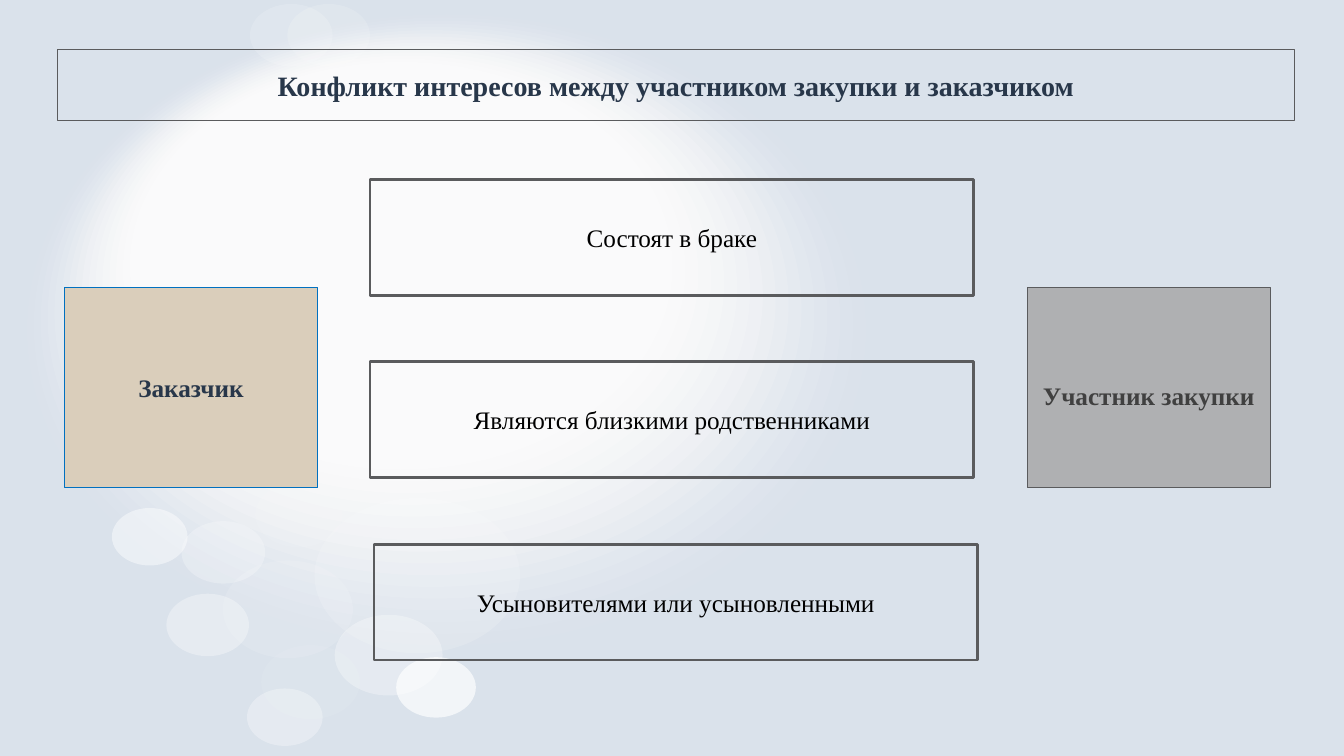
from dataclasses import dataclass

import pptx
import pptx.dml.color
import pptx.enum.shapes
import pptx.enum.text
import pptx.oxml.ns
import pptx.util
from lxml import etree

WIDTH = pptx.util.Inches(13.33)
HEIGHT = pptx.util.Inches(7.5)
FONT = "Times New Roman"
COLOURS = {
    "background": "DAE2EB",
    "white": "FFFFFF",
    "black": "000000",
    "heading": "28374A",
    "border": "5A5B5D",
    "blue": "0070C0",
    "sand": "DACEBB",
    "grey": "AFB0B2",
    "charcoal": "404040",
}
RECTANGLE = pptx.enum.shapes.MSO_SHAPE.RECTANGLE
OVAL = pptx.enum.shapes.MSO_SHAPE.OVAL


@dataclass(frozen=True)
class Area:
    """Percentages of the slide's width and height."""
    left: float
    top: float
    width: float
    height: float


@dataclass(frozen=True)
class Bubble:
    area: Area
    opacity: float


@dataclass(frozen=True)
class Box:
    area: Area
    text: str
    colour: str = "black"
    size: int = 18
    bold: bool = False
    fill: str = ""
    border: str = "border"
    border_width: float = 0.75
    line_spacing: float = 1.0
    space_before: int = 0
    space_after: int = 0


GLOW_STEPS = 16
GLOW = [
    Bubble(
        Area(1.5 + 0.51 * step, 1.47 + 0.42 * step, 63.9 - 1.47 * step, 85.47 - 1.97 * step),
        1.4 + 1.6 * step,
    )
    for step in range(1, GLOW_STEPS + 1)
]
BUBBLES = [
    Bubble(Area(16.58, 74.13, 9.68, 12.93), 12),
    Bubble(Area(23.4, 65.87, 15.3, 20.53), 15),
    Bubble(Area(8.33, 67.2, 5.63, 7.6), 45),
    Bubble(Area(18.98, 63.73, 6.53, 8.67), 8),
    Bubble(Area(13.5, 68.93, 6.23, 8.27), 25),
    Bubble(Area(12.38, 78.53, 6.15, 8.27), 33),
    Bubble(Area(19.43, 85.33, 7.35, 9.8), 7),
    Bubble(Area(18.38, 91.07, 5.63, 7.6), 31),
    Bubble(Area(29.48, 86.93, 5.93, 8), 67),
    Bubble(Area(24.9, 81.33, 8.03, 10.67), 31),
    Bubble(Area(21.38, 0.53, 6.15, 8.27), 15),
    Bubble(Area(18.6, 0.53, 6.15, 8.27), 16),
]
PARTIES = [
    Box(Area(4.28, 6.53, 92.03, 9.47),
        "Конфликт интересов между участником закупки и заказчиком",
        colour="heading", size=20, bold=True),
    Box(Area(4.8, 38, 18.83, 26.53), "Заказчик",
        colour="heading", bold=True, fill="sand", border="blue"),
    Box(Area(76.43, 38, 18.08, 26.53), "Участник закупки",
        colour="charcoal", bold=True, fill="grey",
        line_spacing=1.5, space_before=10, space_after=12),
]
RELATIONS = [
    Box(Area(left, 23.73 + 24.13 * row, 44.93, 15.33), text, border_width=2)
    for row, (left, text) in enumerate([
        (27.53, "Состоят в браке"),
        (27.53, "Являются близкими родственниками"),
        (27.83, "Усыновителями или усыновленными"),
    ])
]


def colour_of(name: str) -> pptx.dml.color.RGBColor:
    return pptx.dml.color.RGBColor.from_string(COLOURS[name])


def add_shape(slide, kind, area: Area):
    shape = slide.shapes.add_shape(
        kind,
        round(WIDTH * area.left / 100),
        round(HEIGHT * area.top / 100),
        round(WIDTH * area.width / 100),
        round(HEIGHT * area.height / 100),
    )
    shape.shadow.inherit = False
    return shape


def draw_bubble(slide, bubble: Bubble) -> None:
    shape = add_shape(slide, OVAL, bubble.area)
    shape.line.fill.background()
    shape.fill.solid()
    shape.fill.fore_color.rgb = colour_of("white")
    colour = shape.element.spPr.find(".//" + pptx.oxml.ns.qn("a:srgbClr"))
    alpha = etree.SubElement(colour, pptx.oxml.ns.qn("a:alpha"))
    alpha.set("val", str(round(bubble.opacity * 1000)))


def draw_box(slide, box: Box) -> None:
    shape = add_shape(slide, RECTANGLE, box.area)
    if box.fill:
        shape.fill.solid()
        shape.fill.fore_color.rgb = colour_of(box.fill)
    else:
        shape.fill.background()
    shape.line.color.rgb = colour_of(box.border)
    shape.line.width = pptx.util.Pt(box.border_width)
    frame = shape.text_frame
    frame.word_wrap = True
    frame.vertical_anchor = pptx.enum.text.MSO_ANCHOR.MIDDLE
    paragraph = frame.paragraphs[0]
    paragraph.text = box.text
    paragraph.alignment = pptx.enum.text.PP_ALIGN.CENTER
    paragraph.line_spacing = box.line_spacing
    paragraph.space_before = pptx.util.Pt(box.space_before)
    paragraph.space_after = pptx.util.Pt(box.space_after)
    paragraph.font.name = FONT
    paragraph.font.size = pptx.util.Pt(box.size)
    paragraph.font.bold = box.bold
    paragraph.font.color.rgb = colour_of(box.colour)


def main() -> None:
    presentation = pptx.Presentation()
    presentation.slide_width = WIDTH
    presentation.slide_height = HEIGHT
    slide = presentation.slides.add_slide(presentation.slide_layouts[6])
    slide.background.fill.solid()
    slide.background.fill.fore_color.rgb = colour_of("background")
    for bubble in GLOW + BUBBLES:
        draw_bubble(slide, bubble)
    for box in PARTIES + RELATIONS:
        draw_box(slide, box)
    presentation.save("out.pptx")


if __name__ == "__main__":
    main()
